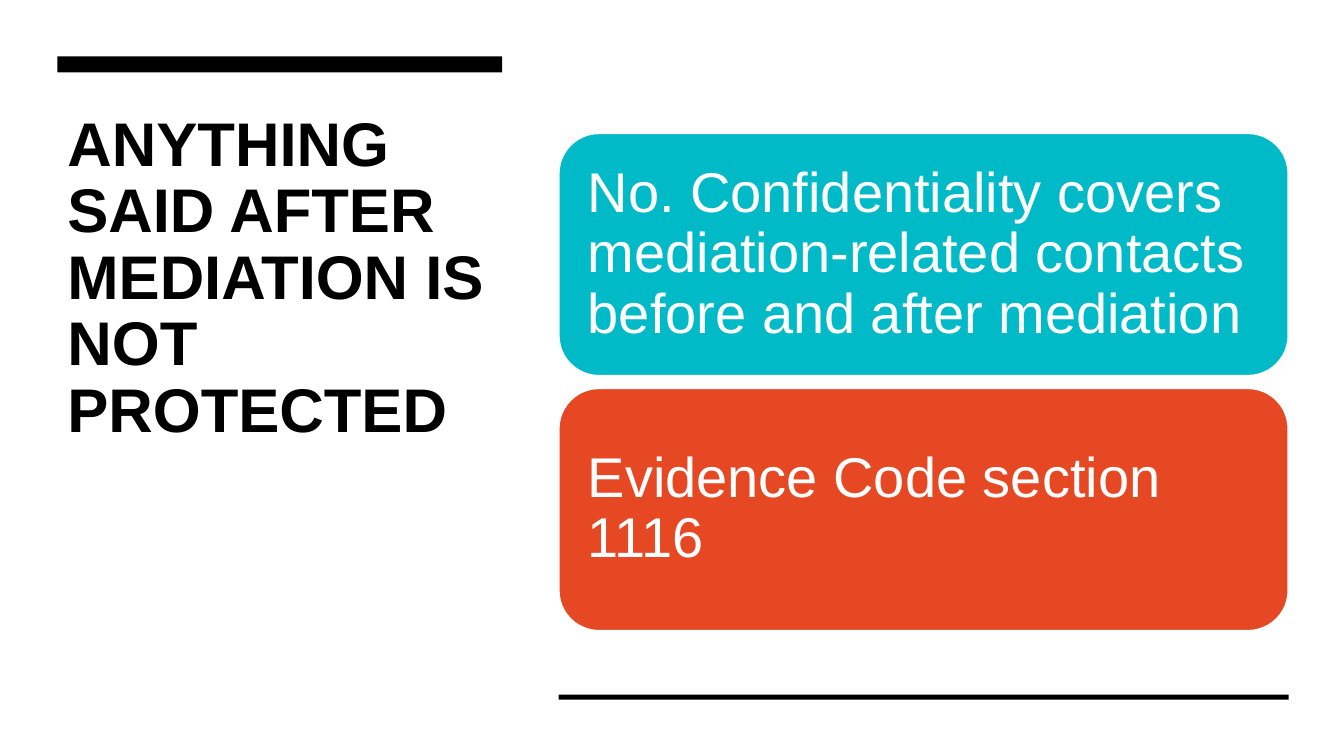
from pptx import Presentation
from pptx.dml.color import RGBColor
from pptx.enum.shapes import MSO_SHAPE as Shape
from pptx.enum.text import MSO_ANCHOR as Anchor, PP_ALIGN as Align
from pptx.util import Pt

HEADLINE = "ANYTHING SAID AFTER MEDIATION IS NOT PROTECTED"
ANSWERS = [
    ("No. Confidentiality covers mediation-related contacts before and after mediation", "teal"),
    ("Evidence Code section 1116", "orange"),
]
THEME = {
    "font": "Arial",
    "headline_size": 44,
    "answer_size": 40,
    "outline": 1.5,
    "spacing": 0.9,
    "white": RGBColor(0xFF, 0xFF, 0xFF),
    "black": RGBColor(0x00, 0x00, 0x00),
    "teal": RGBColor(0x00, 0xBA, 0xC8),
    "orange": RGBColor(0xE6, 0x48, 0x23),
}
PX = 9144
SLIDE_SIZE = (1333, 750)
HEADLINE_BOX = (57, 107, 441, 368)
TOP_BAR = (57, 56, 441, 16)
BOTTOM_RULE = (554, 689, 724, 5)
CARD_LEFT, CARD_TOP, CARD_WIDTH, CARD_HEIGHT = 554, 132, 724, 241
CARD_GAP = 12
CARD_INSET = 12
CARD_MARGIN = 17


def emu(*lengths):
    return [length * PX for length in lengths]


def add_block(slide, kind, box, color, outline=None):
    block = slide.shapes.add_shape(kind, *emu(*box))
    block.shadow.inherit = False
    block.fill.solid()
    block.fill.fore_color.rgb = THEME[color]
    if outline:
        block.line.color.rgb = THEME[outline]
        block.line.width = Pt(THEME["outline"])
    else:
        block.line.fill.background()


def add_words(slide, box, words, size, color, anchor, margins, bold=False):
    frame = slide.shapes.add_textbox(*emu(*box)).text_frame
    frame.word_wrap = True
    frame.vertical_anchor = anchor
    (frame.margin_left, frame.margin_top,
     frame.margin_right, frame.margin_bottom) = emu(*margins)
    paragraph = frame.paragraphs[0]
    paragraph.alignment = Align.LEFT
    paragraph.line_spacing = THEME["spacing"]
    run = paragraph.add_run()
    run.text = words
    run.font.name = THEME["font"]
    run.font.size = Pt(THEME[size])
    run.font.bold = bold
    run.font.color.rgb = THEME[color]


def main():
    deck = Presentation()
    deck.slide_width, deck.slide_height = emu(*SLIDE_SIZE)
    slide = deck.slides.add_slide(deck.slide_layouts[6])
    add_block(slide, Shape.RECTANGLE, (0, 0, *SLIDE_SIZE), "white")
    add_words(slide, HEADLINE_BOX, HEADLINE, "headline_size", "black",
              Anchor.TOP, (10, 5, 10, 5), bold=True)
    add_block(slide, Shape.RECTANGLE, TOP_BAR, "black")
    add_block(slide, Shape.RECTANGLE, BOTTOM_RULE, "black")
    for index, (answer, color) in enumerate(ANSWERS):
        top = CARD_TOP + index * (CARD_HEIGHT + CARD_GAP)
        add_block(slide, Shape.ROUNDED_RECTANGLE,
                  (CARD_LEFT, top, CARD_WIDTH, CARD_HEIGHT), color, "white")
        answer_box = (CARD_LEFT + CARD_INSET, top + CARD_INSET,
                      CARD_WIDTH - 2 * CARD_INSET, CARD_HEIGHT - 2 * CARD_INSET)
        add_words(slide, answer_box, answer, "answer_size", "white",
                  Anchor.MIDDLE, [CARD_MARGIN] * 4)
    deck.save("out.pptx")


if __name__ == "__main__":
    main()
